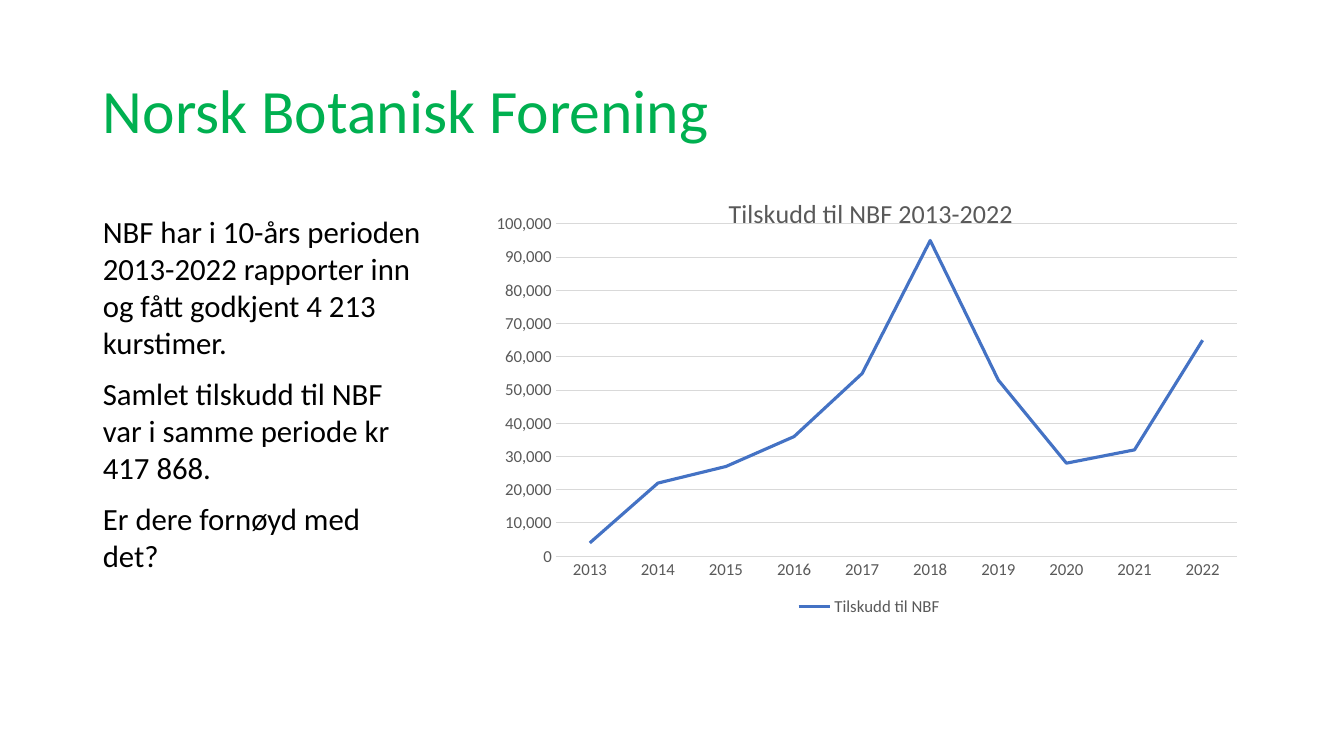
from lxml import etree
from pptx import Presentation
from pptx.chart.data import CategoryChartData
from pptx.dml.color import RGBColor
from pptx.enum.chart import XL_CHART_TYPE, XL_LEGEND_POSITION, XL_TICK_MARK
from pptx.enum.text import MSO_ANCHOR, MSO_AUTO_SIZE, PP_ALIGN
from pptx.oxml import parse_xml
from pptx.oxml.ns import nsdecls, qn
from pptx.util import Inches, Pt

LINE = XL_CHART_TYPE.LINE
BOTTOM = XL_LEGEND_POSITION.BOTTOM
NO_TICK = XL_TICK_MARK.NONE
LEFT = PP_ALIGN.LEFT
TOP, MIDDLE = MSO_ANCHOR.TOP, MSO_ANCHOR.MIDDLE
NO_FIT = MSO_AUTO_SIZE.NONE

# Content
TITLE = "Norsk Botanisk Forening"
BODY = [
    "NBF har i 10-års perioden 2013-2022 rapporter inn og fått godkjent 4 213 kurstimer.",
    "Samlet tilskudd til NBF var i samme periode kr 417 868.",
    "Er dere fornøyd med det?",
]
CHART_TITLE = "Tilskudd til NBF 2013-2022"
SERIES = "Tilskudd til NBF"
GRANTS = {
    "2013": 4000, "2014": 22000, "2015": 27000, "2016": 36000, "2017": 55000,
    "2018": 95000, "2019": 53000, "2020": 28000, "2021": 32000, "2022": 65000,
}
FONT = "Calibri"
GREEN, BLACK, GREY, GRID, BLUE = "00B050", "000000", "595959", "D9D9D9", "4472C4"


def color(value):
    return RGBColor.from_string(value)


def style_font(font, size, value):
    font.name, font.size, font.bold = FONT, Pt(size), False
    font.color.rgb = color(value)


def style_line(line, value, width):
    line.color.rgb = color(value)
    line.width = Pt(width)


def fill_placeholder(sp, box, paragraphs, size, value, anchor, spacing, before=0):
    sp.left, sp.top, sp.width, sp.height = (Inches(v) for v in box)
    tf = sp.text_frame
    tf.word_wrap, tf.auto_size, tf.vertical_anchor = True, NO_FIT, anchor
    for i, text in enumerate(paragraphs):
        p = tf.add_paragraph() if i else tf.paragraphs[0]
        p.alignment, p.line_spacing, p.space_before = LEFT, spacing, Pt(before)
        pPr = p._p.get_or_add_pPr()
        pPr.set("marL", "0")
        pPr.set("indent", "0")
        etree.SubElement(pPr, qn("a:buNone"))
        r = p.add_run()
        r.text = text
        style_font(r.font, size, value)


def manual_layout(**parts):
    modes = "".join(f'<c:{k}Mode val="edge"/>' for k in "xy")
    places = "".join(f'<c:{k} val="{v}"/>' for k, v in parts.items())
    target = '<c:layoutTarget val="inner"/>' if "w" in parts else ""
    return parse_xml(f'<c:layout {nsdecls("c")}><c:manualLayout>{target}{modes}{places}'
                     '</c:manualLayout></c:layout>')


def set_layout(parent, layout, index):
    for old in parent.findall(qn("c:layout")):
        parent.remove(old)
    parent.insert(index, layout)


prs = Presentation()
prs.slide_width, prs.slide_height = Inches(13.33), Inches(7.5)
s = prs.slides.add_slide(prs.slide_layouts[1])

# Title and text
fill_placeholder(s.shapes.title, (0.92, 0.4, 11.5, 1.45), [TITLE], 44, GREEN, MIDDLE, 0.9)
fill_placeholder(s.placeholders[1], (0.92, 2.06, 3.36, 4.76), BODY, 22, BLACK, TOP, 1.0, 10)

# Line chart
data = CategoryChartData(number_format="#,##0")
data.categories = list(GRANTS)
data.add_series(SERIES, list(GRANTS.values()))
chart = s.shapes.add_chart(LINE, Inches(4.83), Inches(1.71), Inches(7.58), Inches(4.45), data).chart
style_font(chart.font, 12, GREY)

chart.has_title = True
r = chart.chart_title.text_frame.paragraphs[0].add_run()
r.text = CHART_TITLE
style_font(r.font, 18.6, GREY)
set_layout(chart.chart_title._element, manual_layout(x=0.31, y=0.04), 1)

chart.has_legend = True
chart.legend.position = BOTTOM
chart.legend.include_in_layout = False
style_font(chart.legend.font, 12, GREY)

plot = chart.plots[0]
plot.vary_by_categories = False
series = plot.series[0]
series.smooth = False
style_line(series.format.line, BLUE, 2.25)
set_layout(chart._chartSpace.chart.plotArea, manual_layout(x=0.09, y=0.115, w=0.891, h=0.741), 0)

# Axes
for axis in (chart.category_axis, chart.value_axis):
    axis.major_tick_mark = axis.minor_tick_mark = NO_TICK
    style_font(axis.tick_labels.font, 12, GREY)
style_line(chart.category_axis.format.line, GRID, 0.75)
values = chart.value_axis
values.minimum_scale, values.maximum_scale, values.major_unit = 0, 100000, 10000
values.tick_labels.number_format = "#,##0"
values.tick_labels.number_format_is_linked = False
values.format.line.fill.background()
style_line(values.major_gridlines.format.line, GRID, 0.75)

prs.save("out.pptx")
